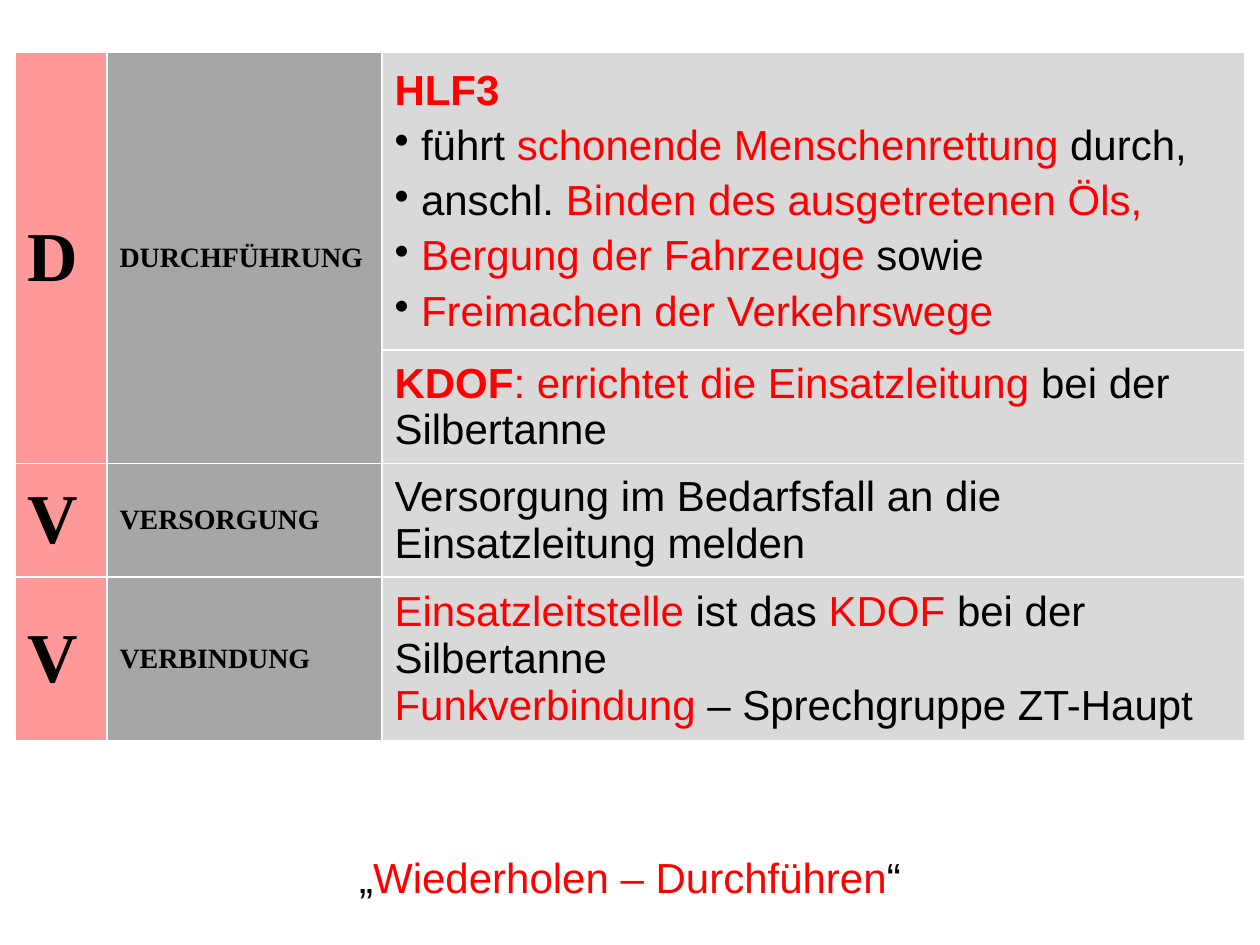
from lxml.etree import SubElement
from pptx import Presentation
from pptx.dml.color import RGBColor
from pptx.enum.text import MSO_ANCHOR as Anchor, PP_ALIGN as Align
from pptx.oxml.ns import qn
from pptx.util import Emu, Pt

PX = 914400 // 126
BLACK, RED, WHITE = "000000", "FF0000", "FFFFFF"
PINK, DARK_GREY, LIGHT_GREY = "FF9999", "A6A6A6", "D9D9D9"
BODY = {"name": "Arial", "size": Pt(24), "bold": False}
LETTER = {"name": "Times New Roman", "size": Pt(40), "bold": True}
HEADING = {**LETTER, "size": Pt(16)}
SPACED = {"space_before": Pt(4.8)}
COLUMNS = [92, 275, 863]
ROWS = [297, 113, 113, 164]
LABELS = [(0, "D", "DURCHFÜHRUNG"), (2, "V", "VERSORGUNG"), (3, "V", "VERBINDUNG")]
STEPS = [
    [(" führt ", BLACK), ("schonende Menschenrettung", RED), (" durch,", BLACK)],
    [(" anschl. ", BLACK), ("Binden des ausgetretenen Öls,", RED)],
    [(" ", BLACK), ("Bergung der Fahrzeuge", RED), (" sowie", BLACK)],
    [(" ", BLACK), ("Freimachen der Verkehrswege", RED)],
]
LEADERSHIP = [("KDOF", RED, True), (": errichtet die Einsatzleitung ", RED),
              ("bei der Silbertanne", BLACK)]
SUPPLY = [("Versorgung im Bedarfsfall an die Einsatzleitung melden", BLACK)]
CONTROL = [("Einsatzleitstelle", RED), (" ist das ", BLACK), ("KDOF ", RED),
           ("bei der Silbertanne", BLACK)]
RADIO = [("Funkverbindung ", RED), ("– Sprechgruppe ZT-Haupt", BLACK)]
CLOSING = [("„", BLACK), ("Wiederholen – Durchführen", RED), ("“", BLACK)]


def px(count):
    """Turn whole pixels into EMU."""
    return Emu(count * PX)


def color(value):
    """Turn a hex string into a colour."""
    return RGBColor.from_string(value)


def apply(target, values):
    """Set attributes from a dict of format values."""
    for name, value in values.items():
        setattr(target, name, value)


def write(para, spans, font=BODY, **values):
    """Fill a paragraph with coloured spans, each with an optional bold flag."""
    apply(para, values)
    for text, shade, *bold in spans:
        span = para.add_run()
        span.text = text
        apply(span.font, {**font, "bold": bold[0]} if bold else font)
        span.font.color.rgb = color(shade)


def add_bullet(para):
    """Put a bullet without indent before a paragraph."""
    props = para._p.get_or_add_pPr()
    props.set("marL", "0")
    props.set("indent", "0")
    SubElement(props, qn("a:buChar"), char="•")


def style_cell(cell, fill):
    """Give a cell its fill, middle anchor and white borders."""
    cell.vertical_anchor = Anchor.MIDDLE
    props = cell._tc.get_or_add_tcPr()
    for side in ("lnL", "lnR", "lnT", "lnB"):
        line = SubElement(props, qn(f"a:{side}"), w=str(Pt(1)))
        paint = SubElement(line, qn("a:solidFill"))
        SubElement(paint, qn("a:srgbClr"), val=WHITE)
    cell.fill.solid()
    cell.fill.fore_color.rgb = color(fill)


def add_grid(page):
    """Add the order table with its sizes, fills and merged cells."""
    frame = page.shapes.add_table(len(ROWS), len(COLUMNS), px(15), px(52),
                                  px(sum(COLUMNS)), px(sum(ROWS)))
    table = frame.table
    apply(table, {"first_row": False, "horz_banding": False})
    for column, width in zip(table.columns, COLUMNS):
        column.width = px(width)
    for row, height in zip(table.rows, ROWS):
        row.height = px(height)
        for cell, fill in zip(row.cells, (PINK, DARK_GREY, LIGHT_GREY)):
            style_cell(cell, fill)
    for column in (0, 1):
        table.cell(0, column).merge(table.cell(1, column))
    return table


def fill_labels(table):
    """Write the large letters and the headings."""
    for row, letter, heading in LABELS:
        for column, (text, font) in enumerate([(letter, LETTER), (heading, HEADING)]):
            para = table.cell(row, column).text_frame.paragraphs[0]
            write(para, [(text, BLACK)], font)


def fill_orders(table):
    """Write the orders in the last column."""
    frames = [table.cell(row, 2).text_frame for row in range(len(ROWS))]
    write(frames[0].paragraphs[0], [("HLF3", RED, True)], **SPACED)
    for step in STEPS:
        para = frames[0].add_paragraph()
        write(para, step, **SPACED)
        add_bullet(para)
    write(frames[1].paragraphs[0], LEADERSHIP)
    write(frames[2].paragraphs[0], SUPPLY)
    write(frames[3].paragraphs[0], CONTROL, **SPACED)
    write(frames[3].add_paragraph(), RADIO)


def add_closing(page):
    """Add the centred closing command."""
    box = page.shapes.add_textbox(px(15), px(845), px(sum(COLUMNS)), px(64))
    box.text_frame.word_wrap = True
    write(box.text_frame.paragraphs[0], CLOSING, alignment=Align.CENTER)


def main():
    """Build the slide and save it."""
    deck = Presentation()
    apply(deck, {"slide_width": px(1260), "slide_height": px(945)})
    page = deck.slides.add_slide(deck.slide_layouts[6])
    add_closing(page)
    table = add_grid(page)
    fill_labels(table)
    fill_orders(table)
    deck.save("out.pptx")


if __name__ == "__main__":
    main()
